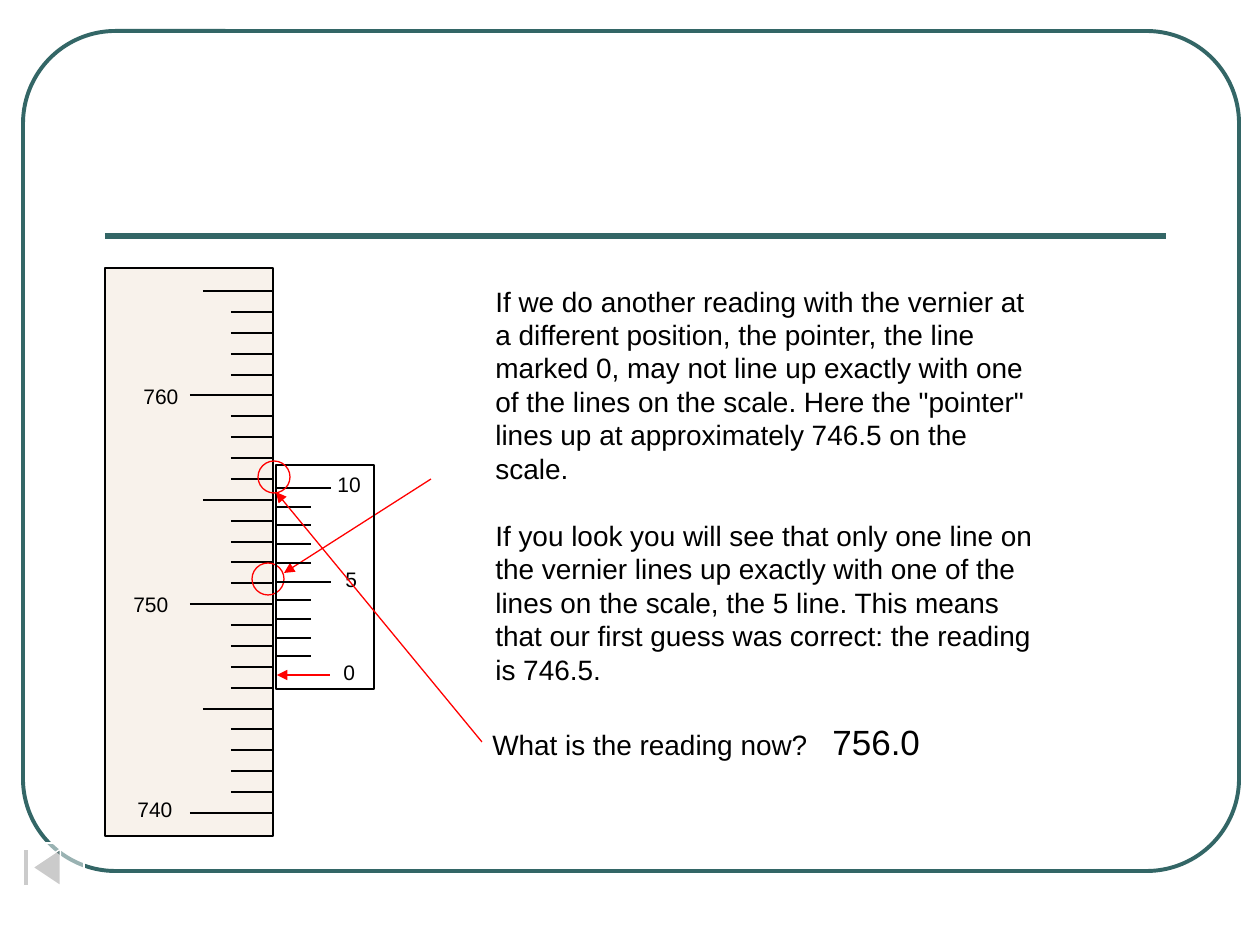
from lxml import etree
from pptx import Presentation
from pptx import util as u
from pptx.dml.color import RGBColor
from pptx.enum import shapes, text
from pptx.oxml.ns import qn

EMU_PER_PX = 914400 / 126
BLACK, RED, TEAL, WHITE, CREAM = "000000", "FF0000", "336666", "FFFFFF", "F7EEE5"
KINDS = shapes.MSO_SHAPE


def px(length):
    return u.Emu(round(length * EMU_PER_PX))


def color(hex_string):
    return RGBColor.from_string(hex_string)


class SlideBuilder:
    font = "Arial"
    thin = 0.75

    def __init__(self, slide):
        self.slide = slide

    def shape(self, kind, left, top, width, height, line=BLACK, weight=thin,
              fill=None, opacity=100):
        shape = self.slide.shapes.add_shape(
            kind, px(left), px(top), px(width), px(height))
        shape.shadow.inherit = False
        shape.line.color.rgb = color(line)
        shape.line.width = u.Pt(weight)
        if fill:
            shape.fill.solid()
            shape.fill.fore_color.rgb = color(fill)
            fill_color = shape.fill._xPr.find(f".//{qn('a:srgbClr')}")
            etree.SubElement(fill_color, qn("a:alpha"), val=str(opacity * 1000))
        else:
            shape.fill.background()
        return shape

    def line(self, x1, y1, x2, y2, line=BLACK, weight=thin, arrow=False):
        connector = self.slide.shapes.add_connector(
            shapes.MSO_CONNECTOR.STRAIGHT, px(x1), px(y1), px(x2), px(y2))
        connector.line.color.rgb = color(line)
        connector.line.width = u.Pt(weight)
        if arrow:
            etree.SubElement(connector.line._get_or_add_ln(),
                             qn("a:tailEnd"), type="triangle")
        etree.SubElement(connector._element.spPr, qn("a:effectLst"))

    def text(self, words, left, top, width, height, size, wrap=False, leading=None):
        """Add text; leading, in points, also separates the paragraphs."""
        box = self.slide.shapes.add_textbox(
            px(left), px(top), px(width), px(height))
        frame = box.text_frame
        frame.text = words
        frame.word_wrap = wrap
        frame.auto_size = text.MSO_AUTO_SIZE.NONE
        for index, paragraph in enumerate(frame.paragraphs):
            if leading:
                paragraph.line_spacing = u.Pt(leading)
                paragraph.space_before = u.Pt(leading if index else 0)
            for run in paragraph.runs:
                run.font.name = self.font
                run.font.size = u.Pt(size)
                run.font.color.rgb = color(BLACK)


def draw_frame(builder):
    frame = builder.shape(KINDS.ROUNDED_RECTANGLE, 23, 31, 1216, 840, TEAL, 2.25)
    frame.adjustments[0] = 0.11
    builder.line(105, 236, 1166, 236, TEAL, 3)


def draw_main_scale(builder):
    top, bottom, right, intervals = 291, 813, 273, 25
    builder.shape(KINDS.RECTANGLE, 105, 268, 168, 568, fill=CREAM, opacity=76)
    for index in range(intervals + 1):
        y = round(top + index * (bottom - top) / intervals)
        left = {0: 203, 5: 190}.get(index % 10, 231)
        builder.line(left, y, right, y)
    for label, left, label_top in (("760", 131, 377), ("750", 121, 585),
                                   ("740", 125, 790)):
        builder.text(label, left, label_top, 60, 38, 12)


def draw_vernier(builder):
    left, zero, ten = 276, 675, 488
    builder.shape(KINDS.RECTANGLE, left, 465, 98, 224)
    builder.line(330, zero, left + 1, zero, RED, arrow=True)
    for mark in range(1, 11):
        y = round(zero + mark * (ten - zero) / 10)
        builder.line(left, y, 311 if mark % 5 else 331, y)
    for label, label_left, top, width in (("10", 325, 465, 49), ("5", 333, 560, 37),
                                          ("0", 331, 653, 37)):
        builder.text(label, label_left, top, width, 38, 12)


def draw_explanation(builder):
    builder.text(
        "If we do another reading with the vernier at a different position, the "
        "pointer, the line marked 0, may not line up exactly with one of the lines "
        "on the scale. Here the \"pointer\" lines up at approximately 746.5 on the "
        "scale.\n"
        "If you look you will see that only one line on the vernier lines up exactly "
        "with one of the lines on the scale, the 5 line. This means that our first "
        "guess was correct: the reading is 746.5.",
        483, 278, 567, 489, 16, wrap=True, leading=19.15)
    builder.line(431, 479, 284, 573, RED, arrow=True)
    builder.shape(KINDS.OVAL, 252, 563, 32, 32, RED)


def draw_question(builder):
    builder.text("What is the reading now?", 480, 721, 341, 47, 16)
    builder.text("756.0", 820, 714, 113, 55, 20)
    builder.line(482, 742, 276, 492, RED, arrow=True)
    builder.shape(KINDS.OVAL, 258, 461, 32, 32, RED)


def main():
    presentation = Presentation()
    presentation.slide_width, presentation.slide_height = px(1260), px(945)
    blank_layout = presentation.slide_layouts[6]
    builder = SlideBuilder(presentation.slides.add_slide(blank_layout))
    draw_frame(builder)
    draw_main_scale(builder)
    draw_explanation(builder)
    builder.shape(KINDS.ACTION_BUTTON_BEGINNING, 0, 843, 84, 49, WHITE,
                  fill=WHITE, opacity=50)
    draw_vernier(builder)
    draw_question(builder)
    presentation.save("out.pptx")


if __name__ == "__main__":
    main()
